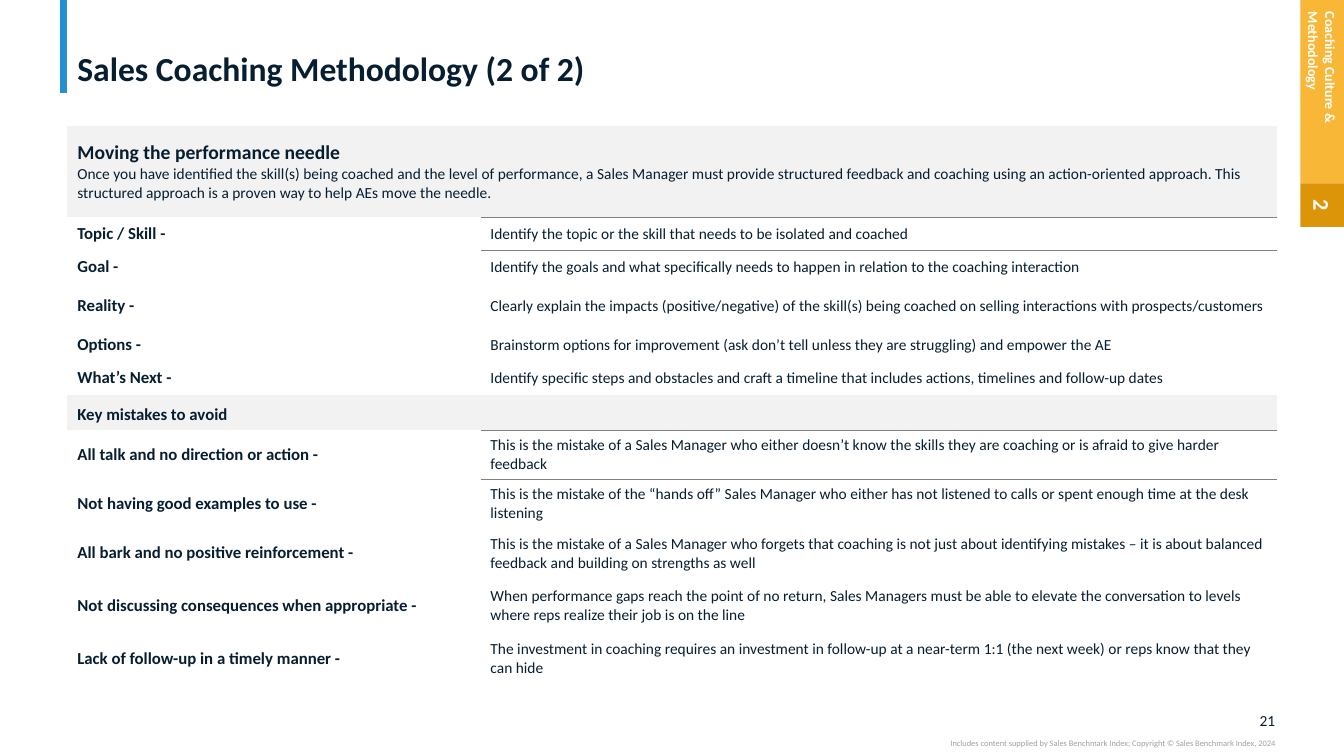
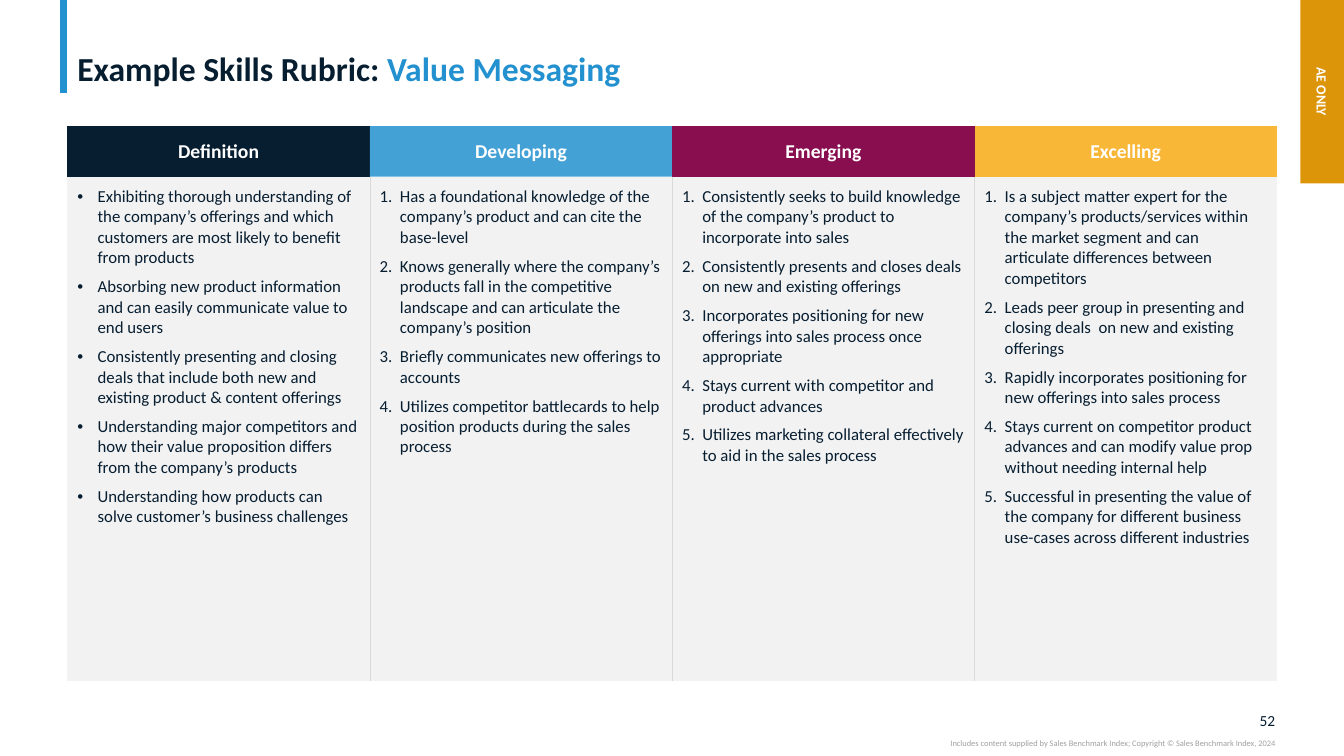
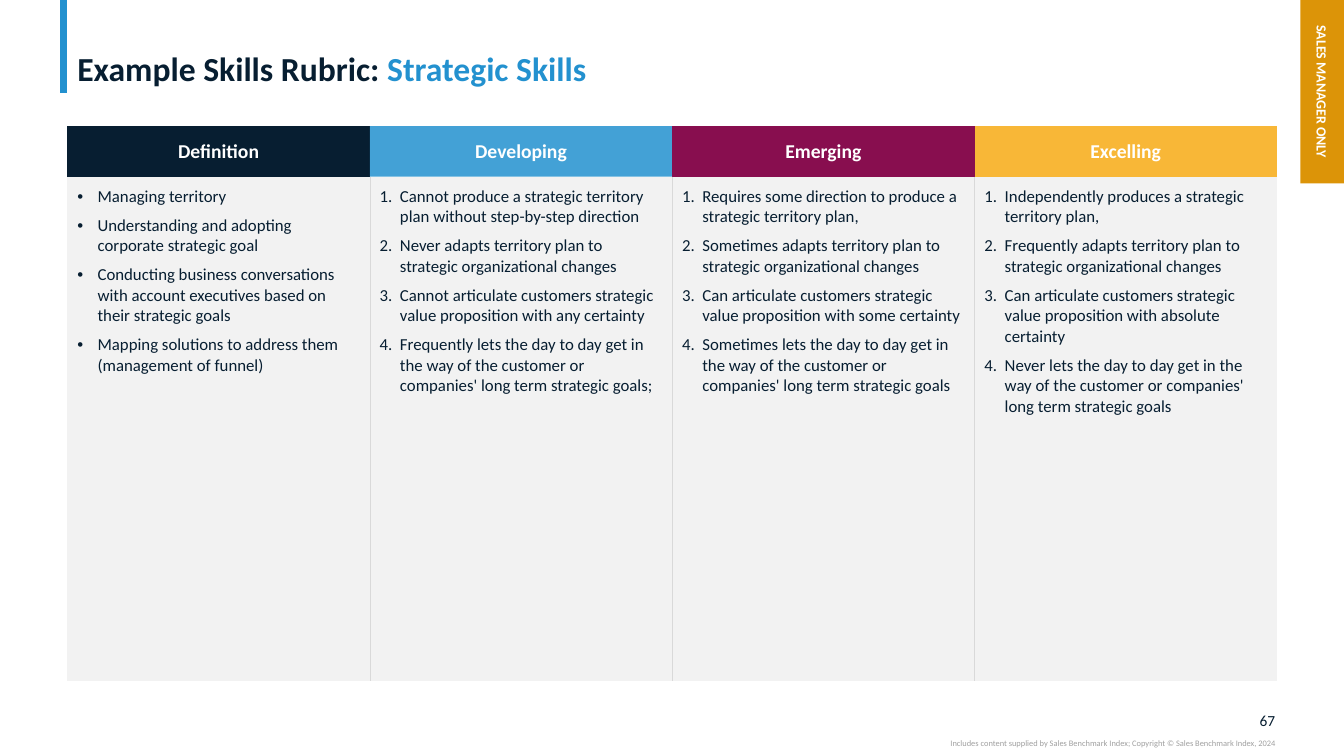
from lxml import etree
from pptx import Presentation
from pptx import util as u
from pptx.dml import color
from pptx.enum import shapes, text
from pptx.oxml import ns

NAVY, BLUE, PLUM = "071E31", "2391CF", "880E4F"
YELLOW, AMBER, WHITE = "F8B737", "DC9408", "FFFFFF"
PALE, RULE, DIVIDER, MUTED = "F2F2F2", "808080", "D9D9D9", "A0A0A0"
FONT = "Calibri"
LEFT, CENTER, RIGHT, JUSTIFY = (
    text.PP_ALIGN.LEFT, text.PP_ALIGN.CENTER, text.PP_ALIGN.RIGHT, text.PP_ALIGN.JUSTIFY)
TOP, MIDDLE, BOTTOM = text.MSO_ANCHOR.TOP, text.MSO_ANCHOR.MIDDLE, text.MSO_ANCHOR.BOTTOM
NO_GRID = "{2D5ABB26-0587-4C30-8999-92F81FD0307C}"
COPYRIGHT = "Includes content supplied by Sales Benchmark Index; Copyright © Sales Benchmark Index, 2024"
PAGE_WIDTH, TABLE_LEFT, TABLE_TOP, TABLE_WIDTH = 33.87, 1.7, 3.18, 30.48
TAB_WIDTH, TAB_LENGTH = 1.1, 4.62


def rgb(value):
    return color.RGBColor.from_string(value)


def child(parent, tag, **attributes):
    return etree.SubElement(parent, ns.qn(tag), attributes)


class Deck:
    def __init__(self):
        self.prs = Presentation()
        self.prs.slide_width, self.prs.slide_height = u.Cm(PAGE_WIDTH), u.Cm(19.05)
        self.slide = None

    def start(self, page, heading, topic=""):
        self.slide = self.prs.slides.add_slide(self.prs.slide_layouts[5])
        self.accent()
        self.note(str(page), 31.3, 17.9, 0.84, 0.49, 11, NAVY)
        self.note(COPYRIGHT, 19.05, 18.6, 13.09, 0.25, 6, MUTED)
        self.title(heading, topic)

    def style(self, paragraph, size, hue, bold=False, align=LEFT):
        paragraph.alignment = align
        font = paragraph.font
        font.name, font.size, font.bold = FONT, u.Pt(size), bold
        font.color.rgb = rgb(hue)

    def pad(self, holder, side, top):
        holder.margin_left = holder.margin_right = u.Cm(side)
        holder.margin_top = holder.margin_bottom = u.Cm(top)

    def accent(self):
        bar = self.slide.shapes.add_connector(
            shapes.MSO_CONNECTOR.STRAIGHT, u.Cm(1.6), 0, u.Cm(1.6), u.Cm(2.34))
        bar.line.color.rgb, bar.line.width = rgb(BLUE), u.Pt(5)
        child(bar.element.spPr, "a:effectLst")

    def note(self, words, left, top, width, height, size, hue):
        frame = self.slide.shapes.add_textbox(*map(u.Cm, (left, top, width, height))).text_frame
        frame.word_wrap = True
        frame.vertical_anchor = MIDDLE
        self.pad(frame, 0, 0)
        frame.text = words
        self.style(frame.paragraphs[0], size, hue, align=RIGHT)

    def title(self, heading, topic):
        holder = self.slide.shapes.title
        holder.left, holder.top, holder.width, holder.height = map(
            u.Cm, (TABLE_LEFT, 0.1, 30.46, 2.13))
        frame = holder.text_frame
        frame.auto_size, frame.word_wrap = text.MSO_AUTO_SIZE.NONE, True
        frame.vertical_anchor = BOTTOM
        self.pad(frame, 0.25, 0)
        paragraph = frame.paragraphs[0]
        paragraph.line_spacing = 0.9
        self.style(paragraph, 24, NAVY, True)
        paragraph.add_run().text = heading
        if topic:
            subject = paragraph.add_run()
            subject.text = topic
            subject.font.color.rgb = rgb(BLUE)

    def tab(self, label, fill, top=0, length=TAB_LENGTH, size=10, align=CENTER):
        left = PAGE_WIDTH - (TAB_WIDTH + length) / 2
        across = top + (length - TAB_WIDTH) / 2
        marker = self.slide.shapes.add_shape(
            shapes.MSO_SHAPE.RECTANGLE, *map(u.Cm, (left, across, length, TAB_WIDTH)))
        marker.rotation = 90
        marker.shadow.inherit = False
        marker.fill.solid()
        marker.fill.fore_color.rgb = rgb(fill)
        marker.line.fill.background()
        frame = marker.text_frame
        frame.word_wrap, frame.vertical_anchor = True, MIDDLE
        self.pad(frame, 0.3, 0.13)
        frame.text = label
        self.style(frame.paragraphs[0], size, WHITE, True, align)

    def table(self, widths, heights):
        grid = self.slide.shapes.add_table(
            len(heights), len(widths),
            *map(u.Cm, (TABLE_LEFT, TABLE_TOP, TABLE_WIDTH, sum(heights)))).table
        grid._tbl.tblPr.find(ns.qn("a:tableStyleId")).text = NO_GRID
        grid.first_row = grid.horz_banding = False
        for column, width in zip(grid.columns, widths):
            column.width = u.Cm(width)
        for row, height in zip(grid.rows, heights):
            row.height = u.Cm(height)
        return grid

    def cell(self, cell, lines, size, hue=NAVY, bold=False, align=LEFT, anchor=MIDDLE,
             fill=None, pad=(0.25, 0.13), alpha=None):
        if fill:
            cell.fill.solid()
            cell.fill.fore_color.rgb = rgb(fill)
        else:
            cell.fill.background()
        if alpha:
            shade = cell._tc.tcPr.find(".//" + ns.qn("a:srgbClr"))
            child(shade, "a:alpha", val=str(alpha * 1000))
        cell.vertical_anchor = anchor
        self.pad(cell, *pad)
        cell.text = "\n".join(lines)
        for paragraph in cell.text_frame.paragraphs:
            self.style(paragraph, size, hue, bold, align)

    def border(self, cell, sides, hue):
        for place, side in enumerate(sides):
            edge = etree.Element(ns.qn("a:ln" + side), w=str(u.Pt(0.5)))
            child(child(edge, "a:solidFill"), "a:srgbClr", val=hue)
            cell._tc.get_or_add_tcPr().insert(place, edge)

    def listing(self, cell, items, numbered):
        cell.text = "\n".join(items)
        cell.fill.solid()
        cell.fill.fore_color.rgb = rgb(PALE)
        cell.vertical_anchor = TOP
        self.pad(cell, 0.25, 0.25)
        for position, paragraph in enumerate(cell.text_frame.paragraphs):
            props = paragraph._p.get_or_add_pPr()
            props.set("marL", str(u.Cm(0.51)))
            props.set("indent", str(-u.Cm(0.51)))
            child(child(props, "a:buClr"), "a:srgbClr", val=NAVY)
            if numbered:
                child(props, "a:buFont", typeface="+mj-lt")
                child(props, "a:buAutoNum", type="arabicPeriod")
            else:
                child(props, "a:buFont", typeface="Arial")
                child(props, "a:buChar", char="•")
            if position:
                paragraph.space_before = u.Pt(6)
            self.style(paragraph, 12, NAVY)

    def methodology(self, intro, steps, warning, mistakes):
        heights = [2.29] + [row[0] for row in steps] + [0.89] + [row[0] for row in mistakes]
        grid = self.table([10.41, 20.07], heights)
        second = len(steps) + 1
        for row in (0, second):
            grid.cell(row, 0).merge(grid.cell(row, 1))
        self.cell(grid.cell(0, 0), intro, 11, fill=PALE)
        self.style(grid.cell(0, 0).text_frame.paragraphs[0], 14, NAVY, True)
        self.cell(grid.cell(second, 0), [warning], 12, bold=True, anchor=BOTTOM, fill=PALE)
        for first, rows, align in ((1, steps, JUSTIFY), (second + 1, mistakes, LEFT)):
            for row, (_, name, advice) in enumerate(rows, first):
                self.cell(grid.cell(row, 0), [name + " -"], 12, bold=True)
                self.cell(grid.cell(row, 1), [advice], 11, align=align)
            self.border(grid.cell(first, 1), "T", RULE)

    def rubric(self, columns):
        levels = [("Definition", NAVY, None), ("Developing", BLUE, 85),
                  ("Emerging", PLUM, None), ("Excelling", YELLOW, None)]
        grid = self.table([TABLE_WIDTH / len(levels)] * len(levels), [1.27, 12.7])
        last = len(levels) - 1
        for place, ((level, fill, alpha), items) in enumerate(zip(levels, columns)):
            self.cell(grid.cell(0, place), [level], 14, WHITE, True, CENTER,
                      fill=fill, pad=(0.33, 0.18), alpha=alpha)
            self.listing(grid.cell(1, place), items, numbered=place > 0)
            sides = ("L" if place else "") + ("R" if place < last else "")
            self.border(grid.cell(1, place), sides, DIVIDER)


INTRO = [
    "Moving the performance needle",
    "Once you have identified the skill(s) being coached and the level of performance, a Sales Manager must provide structured feedback and coaching using an action-oriented approach. This structured approach is a proven way to help AEs move the needle.",
]
STEPS = [
    (0.84, "Topic / Skill", "Identify the topic or the skill that needs to be isolated and coached"),
    (0.84, "Goal", "Identify the goals and what specifically needs to happen in relation to the coaching interaction"),
    (1.12, "Reality", "Clearly explain the impacts (positive/negative) of the skill(s) being coached on selling interactions with prospects/customers"),
    (0.84, "Options", "Brainstorm options for improvement (ask don’t tell unless they are struggling) and empower the AE"),
    (0.84, "What’s Next", "Identify specific steps and obstacles and craft a timeline that includes actions, timelines and follow-up dates"),
]
MISTAKES = [
    (1.24, "All talk and no direction or action", "This is the mistake of a Sales Manager who either doesn’t know the skills they are coaching or is afraid to give harder feedback"),
    (1.24, "Not having good examples to use", "This is the mistake of the “hands off” Sales Manager who either has not listened to calls or spent enough time at the desk listening"),
    (1.24, "All bark and no positive reinforcement", "This is the mistake of a Sales Manager who forgets that coaching is not just about identifying mistakes – it is about balanced feedback and building on strengths as well"),
    (1.42, "Not discussing consequences when appropriate", "When performance gaps reach the point of no return, Sales Managers must be able to elevate the conversation to levels where reps realize their job is on the line"),
    (1.24, "Lack of follow-up in a timely manner", "The investment in coaching requires an investment in follow-up at a near-term 1:1 (the next week) or reps know that they can hide"),
]
VALUE_MESSAGING = [
    [
        "Exhibiting thorough understanding of the company’s offerings and which customers are most likely to benefit from products",
        "Absorbing new product information and can easily communicate value to end users",
        "Consistently presenting and closing deals that include both new and existing product & content offerings",
        "Understanding major competitors and how their value proposition differs from the company’s products",
        "Understanding how products can solve customer’s business challenges",
    ],
    [
        "Has a foundational knowledge of the company’s product and can cite the base-level",
        "Knows generally where the company’s products fall in the competitive landscape and can articulate the company’s position",
        "Briefly communicates new offerings to accounts",
        "Utilizes competitor battlecards to help position products during the sales process",
    ],
    [
        "Consistently seeks to build knowledge of the company’s product to incorporate into sales",
        "Consistently presents and closes deals on new and existing offerings",
        "Incorporates positioning for new offerings into sales process once appropriate",
        "Stays current with competitor and product advances",
        "Utilizes marketing collateral effectively to aid in the sales process",
    ],
    [
        "Is a subject matter expert for the company’s products/services within the market segment and can articulate differences between competitors",
        "Leads peer group in presenting and closing deals  on new and existing offerings",
        "Rapidly incorporates positioning for new offerings into sales process",
        "Stays current on competitor product advances and can modify value prop without needing internal help",
        "Successful in presenting the value of the company for different business use-cases across different industries",
    ],
]
STRATEGIC_SKILLS = [
    [
        "Managing territory",
        "Understanding and adopting corporate strategic goal",
        "Conducting business conversations with account executives based on their strategic goals",
        "Mapping solutions to address them (management of funnel)",
    ],
    [
        "Cannot produce a strategic territory plan without step-by-step direction",
        "Never adapts territory plan to strategic organizational changes",
        "Cannot articulate customers strategic value proposition with any certainty",
        "Frequently lets the day to day get in the way of the customer or companies' long term strategic goals;",
    ],
    [
        "Requires some direction to produce a strategic territory plan,",
        "Sometimes adapts territory plan to strategic organizational changes",
        "Can articulate customers strategic value proposition with some certainty",
        "Sometimes lets the day to day get in the way of the customer or companies' long term strategic goals",
    ],
    [
        "Independently produces a strategic territory plan,",
        "Frequently adapts territory plan to strategic organizational changes",
        "Can articulate customers strategic value proposition with absolute certainty",
        "Never lets the day to day get in the way of the customer or companies' long term strategic goals",
    ],
]
RUBRICS = [
    (52, "Value Messaging", "AE ONLY", VALUE_MESSAGING),
    (67, "Strategic Skills", "SALES MANAGER ONLY", STRATEGIC_SKILLS),
]


def main():
    deck = Deck()
    deck.start(21, "Sales Coaching Methodology (2 of 2)")
    deck.tab("Coaching Culture & Methodology", YELLOW, align=LEFT)
    deck.tab("2", AMBER, top=TAB_LENGTH, length=TAB_WIDTH, size=16)
    deck.methodology(INTRO, STEPS, "Key mistakes to avoid", MISTAKES)
    for page, topic, audience, columns in RUBRICS:
        deck.start(page, "Example Skills Rubric: ", topic)
        deck.tab(audience, AMBER)
        deck.rubric(columns)
    deck.prs.save("out.pptx")


if __name__ == "__main__":
    main()
